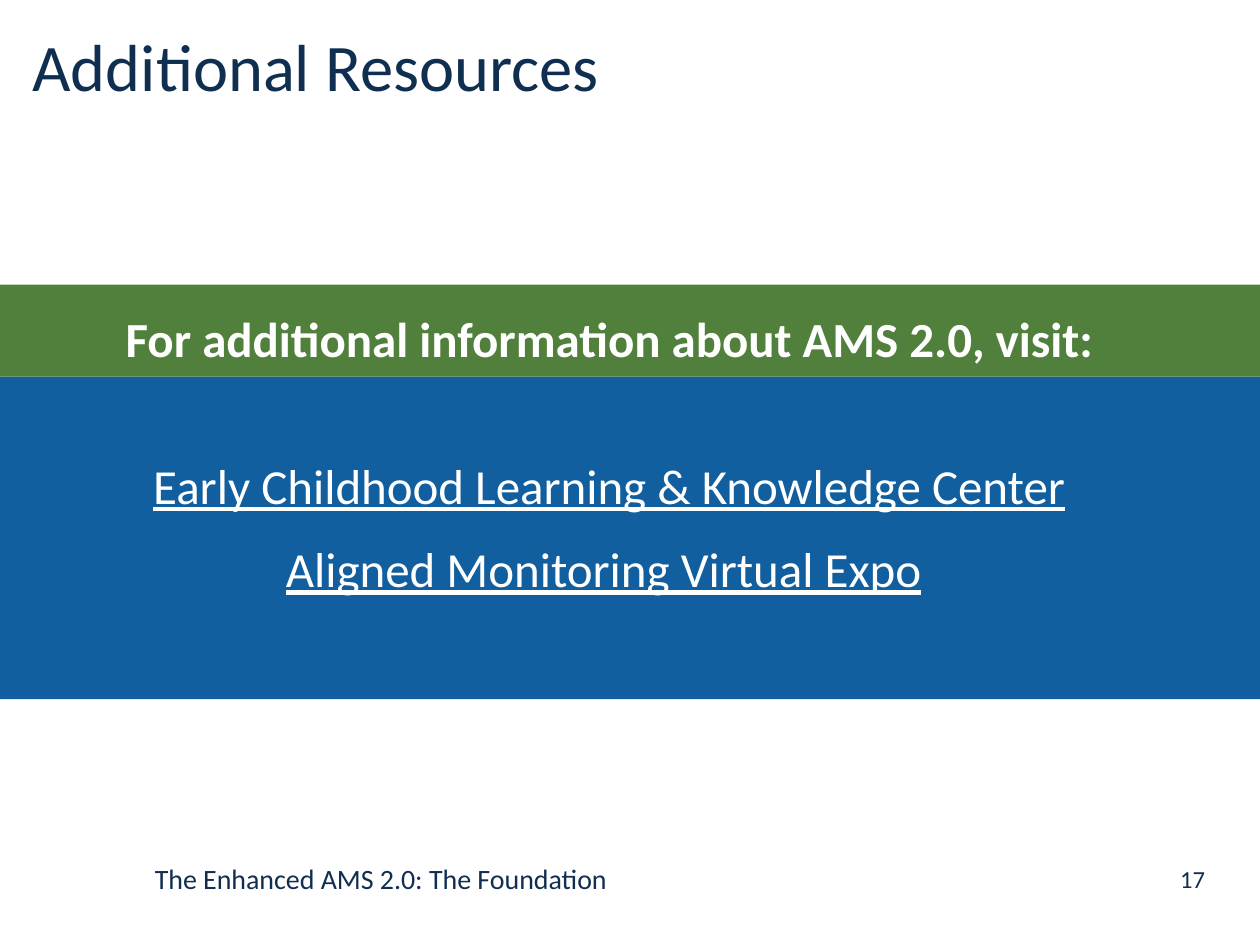
from pptx import Presentation
from pptx import util as u
from pptx.dml import color
from pptx.enum import shapes, text

NAVY, WHITE, BLUE, GREEN = "112E51", "FFFFFF", "115F9F", "50803B"


def rgb(value):
    return color.RGBColor.from_string(value)


class SlideBuilder:
    """Holds the page being built and its text style."""

    font = "Calibri"

    def __init__(self, page):
        self.page = page

    def band(self, left, top, width, height, fill):
        band = self.page.shapes.add_shape(
            shapes.MSO_SHAPE.RECTANGLE, *map(u.Inches, (left, top, width, height)))
        band.shadow.inherit = False
        band.fill.solid()
        band.fill.fore_color.rgb = rgb(fill)
        band.line.fill.background()

    def frame(self, left, top, width, height, anchor=text.MSO_ANCHOR.TOP):
        box = self.page.shapes.add_textbox(*map(u.Inches, (left, top, width, height)))
        box.text_frame.word_wrap = True
        box.text_frame.vertical_anchor = anchor
        return box.text_frame

    def style(self, para, align=text.PP_ALIGN.LEFT, spacing=1.0, before=0):
        para.alignment = align
        para.line_spacing = spacing
        para.space_before = u.Pt(before)
        return para

    def span(self, para, words, size, fill=NAVY, bold=False, underline=False):
        span = para.add_run()
        span.text = words
        span.font.name = self.font
        span.font.size = u.Pt(size)
        span.font.color.rgb = rgb(fill)
        span.font.bold = bold
        span.font.underline = underline


def main():
    deck = Presentation()
    deck.slide_width, deck.slide_height = u.Inches(10), u.Inches(7.5)
    builder = SlideBuilder(deck.slides.add_slide(deck.slide_layouts[6]))
    middle, center = text.MSO_ANCHOR.MIDDLE, text.PP_ALIGN.CENTER

    builder.band(-0.01, 2.99, 10.01, 2.56, BLUE)
    builder.band(-0.01, 2.26, 10.01, 0.73, GREEN)

    title = builder.frame(0.16, 0.14, 9.67, 0.83, middle)
    para = builder.style(title.paragraphs[0], spacing=0.9)
    builder.span(para, "Additional Resources", 38, "102E50")

    number = builder.frame(9.05, 6.74, 0.83, 0.47, middle)
    builder.span(builder.style(number.paragraphs[0], center), "17", 14)

    footer = builder.frame(1.13, 6.79, 7.25, 0.4)
    builder.span(builder.style(footer.paragraphs[0]),
                 "The Enhanced AMS 2.0: The Foundation", 16)

    resources = builder.frame(0.5, 2.28, 8.67, 2.55)
    heading = builder.style(resources.paragraphs[0], center, 1.25)
    builder.span(heading, "For additional information about AMS 2.0, visit:",
                 28, WHITE, bold=True)
    links = [("Early Childhood Learning & Knowledge Center", 42),
             ("Aligned Monitoring Virtual Expo", 5.6)]
    for words, before in links:
        para = builder.style(resources.add_paragraph(), center, 1.25, before)
        builder.span(para, words, 28, WHITE, underline=True)
    builder.span(para, " ", 28)

    deck.save("out.pptx")


if __name__ == "__main__":
    main()
